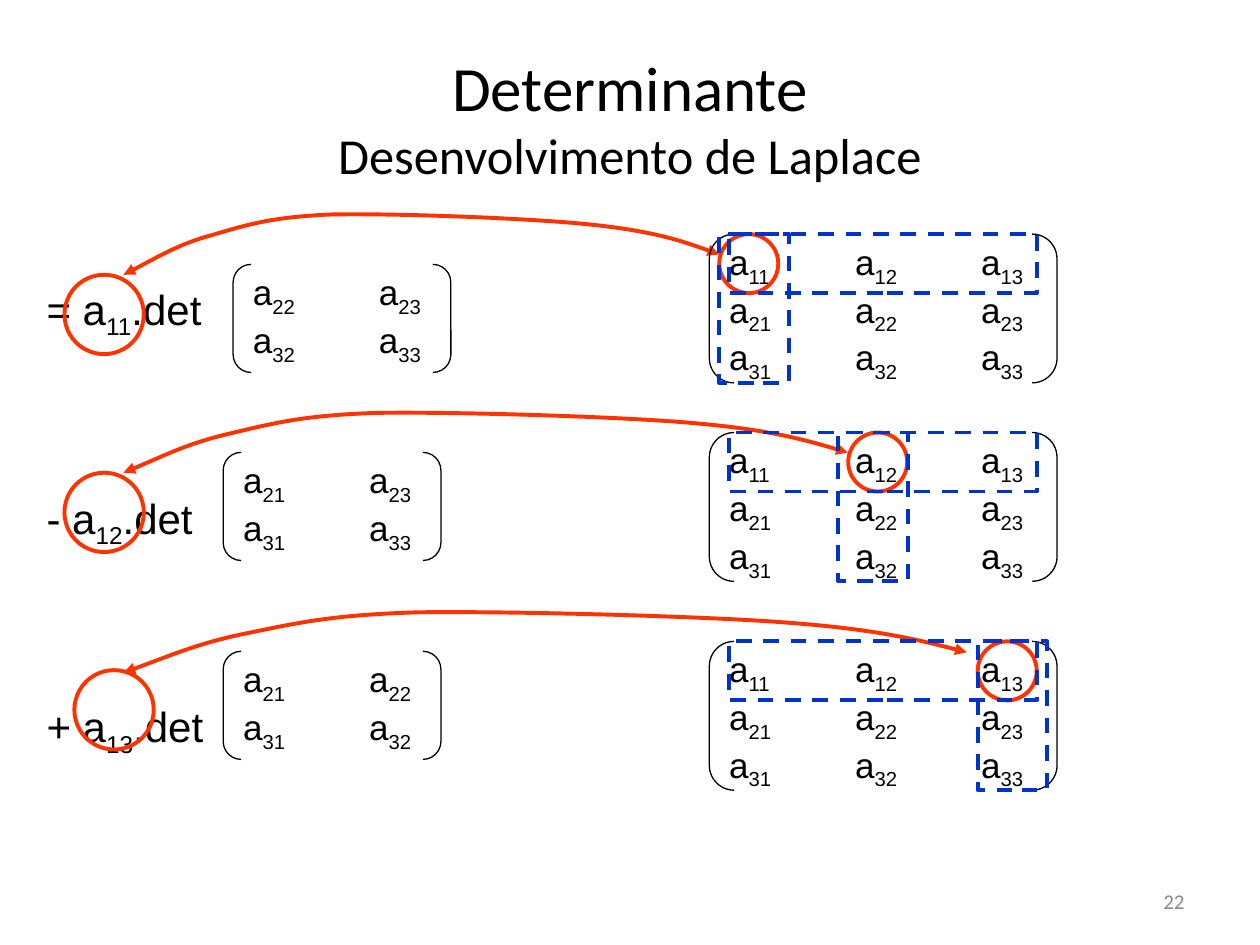
import dataclasses

import pptx
import pptx.dml.color
import pptx.enum.dml
import pptx.enum.shapes
import pptx.enum.text
import pptx.oxml
import pptx.oxml.ns
import pptx.util

Cm = pptx.util.Cm
Pt = pptx.util.Pt
SHAPE = pptx.enum.shapes.MSO_SHAPE
ALIGN = pptx.enum.text.PP_ALIGN
ANCHOR = pptx.enum.text.MSO_ANCHOR
qn = pptx.oxml.ns.qn

BLACK = pptx.dml.color.RGBColor(0x00, 0x00, 0x00)
GREY = pptx.dml.color.RGBColor(0x89, 0x89, 0x89)
RED = pptx.dml.color.RGBColor(0xFF, 0x33, 0x00)
BLUE = pptx.dml.color.RGBColor(0x00, 0x33, 0xCC)

TAB = 2.54
CURVE = [(0, 1), (0.05, 0.76), (0.09, 0.51), (0.15, 0.35), (0.21, 0.18),
         (0.25, 0.06), (0.35, 0.02), (0.46, 0), (0.68, 0.08), (0.78, 0.18),
         (0.89, 0.29), (0.95, 0.49), (1, 0.67)]
CIRCLE_X = [0.2, 2.8, 5.41]
COLUMN_X = [0.2, 2.6, 5.41]


@dataclasses.dataclass
class Term:
    """One cofactor term: its sign and the places of its parts in cm."""
    sign: str
    label_y: float
    circle: tuple
    minor: tuple
    arrow: tuple
    matrix_y: float


TERMS = [
    Term("=", 5.59, (1.3, 5.54), (4.7, 5.33), (2.49, 4.3, 12.01, 1.24), 4.72),
    Term("-", 9.8, (1.3, 9.53), (4.5, 9.12), (2.49, 8.3, 14.6, 1.23), 8.72),
    Term("+", 14, (1.5, 13.51), (4.5, 13.13), (2.49, 12.32, 17, 1.24), 12.93),
]


def add_outline(s, kind, box, color, width=2.25, dash=None):
    """Add an unfilled preset shape."""
    sp = s.shapes.add_shape(kind, *map(Cm, box))
    sp.shadow.inherit = False
    sp.fill.background()
    sp.line.color.rgb = color
    sp.line.width = Pt(width)
    if dash:
        sp.line.dash_style = dash


def add_text(s, box, lines, size):
    """Add lines in which the parts between bars are subscripts."""
    tf = s.shapes.add_textbox(*map(Cm, box)).text_frame
    tf.word_wrap = True
    for i, line in enumerate(lines):
        p = tf.paragraphs[0] if i == 0 else tf.add_paragraph()
        tabs = pptx.oxml.parse_xml(
            '<a:tabLst xmlns:a="http://schemas.openxmlformats.org/drawingml/2006/main"/>')
        for n in (1, 2):
            tabs.append(tabs.makeelement(qn("a:tab"), {"pos": str(Cm(TAB * n)), "algn": "l"}))
        p._p.get_or_add_pPr().append(tabs)
        for k, part in enumerate(line.split("|")):
            if not part:
                continue
            r = p.add_run()
            r.text = part
            r.font.size = Pt(size)
            r.font.name = "Arial"
            r.font.color.rgb = BLACK
            if k % 2:
                r._r.get_or_add_rPr().set("baseline", "-25000")


def add_matrix(s, box, rows, cols):
    """Add the bracketed entries of the given rows and columns."""
    x, y, w, h = box
    lines = ["\t".join(f"a|{i}{j}|" for j in cols) for i in rows]
    add_text(s, (x + 0.15, y, w - 0.4, h - 0.2), lines, 20)
    add_outline(s, SHAPE.DOUBLE_BRACKET, box, BLACK, 0.75)


def add_arrow(s, box):
    """Add the curved double arrow that fills the box."""
    x, y, w, h = box
    pts = [(Cm(x + w * u), Cm(y + h * v)) for u, v in CURVE]
    fb = s.shapes.build_freeform(*pts[0])
    fb.add_line_segments(pts[1:], close=False)
    sp = fb.convert_to_shape()
    sp.shadow.inherit = False
    sp.fill.background()
    sp.line.color.rgb = RED
    sp.line.width = Pt(2.25)
    segments = list(sp._element.iter(qn("a:lnTo")))
    for i in range(0, len(segments), 3):
        first, *rest = segments[i:i + 3]
        bez = first.makeelement(qn("a:cubicBezTo"), {})
        first.addprevious(bez)
        for seg in (first, *rest):
            bez.append(seg[0])
            seg.getparent().remove(seg)
    ln = sp.line._get_or_add_ln()
    for end in ("a:headEnd", "a:tailEnd"):
        ln.append(ln.makeelement(qn(end), {"type": "triangle"}))


def add_marked_matrix(s, box, col):
    """Add the full matrix with its first row and one column struck out."""
    x, y, w, h = box
    add_matrix(s, box, (1, 2, 3), (1, 2, 3))
    add_outline(s, SHAPE.OVAL, (x + CIRCLE_X[col - 1], y, 1.19, 1.19), RED)
    dash = pptx.enum.dml.MSO_LINE.DASH
    add_outline(s, SHAPE.RECTANGLE, (x + 0.4, y, 6.2, 1.19), BLUE, dash=dash)
    add_outline(s, SHAPE.RECTANGLE, (x + COLUMN_X[col - 1], y, 1.4, h), BLUE, dash=dash)


def add_term(s, term, col):
    """Add one cofactor term with its minor, arrow and full matrix."""
    add_text(s, (0.69, term.label_y, 4, 1.2), [f"{term.sign} a|1{col}|.det"], 24)
    others = [j for j in (1, 2, 3) if j != col]
    add_matrix(s, (*term.minor, 4.39, 2.18), (2, 3), others)
    add_outline(s, SHAPE.OVAL, (*term.circle, 1.6, 1.6), RED)
    add_arrow(s, term.arrow)
    add_marked_matrix(s, (14.3, term.matrix_y, 7.01, 3), col)


def add_title(s, box):
    """Place and format the two-line title."""
    sp = s.shapes.title
    sp.left, sp.top, sp.width, sp.height = map(Cm, box)
    tf = sp.text_frame
    tf.text = "Determinante\vDesenvolvimento de Laplace"
    tf.vertical_anchor = ANCHOR.MIDDLE
    p = tf.paragraphs[0]
    p.alignment = ALIGN.CENTER
    for r, size in zip(p.runs, (36, 28.8)):
        r.font.size = Pt(size)
        r.font.name = "Calibri"
        r.font.color.rgb = BLACK


def add_page_number(s, box):
    """Add the page number."""
    tf = s.shapes.add_textbox(*map(Cm, box)).text_frame
    tf.word_wrap = True
    tf.vertical_anchor = ANCHOR.MIDDLE
    tf.text = "22"
    p = tf.paragraphs[0]
    p.alignment = ALIGN.RIGHT
    r = p.runs[0]
    r.font.size = Pt(12)
    r.font.name = "Calibri"
    r.font.color.rgb = GREY


def main():
    """Build and save the slide."""
    prs = pptx.Presentation()
    prs.slide_width, prs.slide_height = Cm(25.4), Cm(19.05)
    s = prs.slides.add_slide(prs.slide_layouts[5])
    add_title(s, (1.27, 0.76, 22.86, 3.18))
    for col, term in enumerate(TERMS, 1):
        add_term(s, term, col)
    add_page_number(s, (18.2, 17.66, 5.93, 1.01))
    prs.save("out.pptx")


if __name__ == "__main__":
    main()
